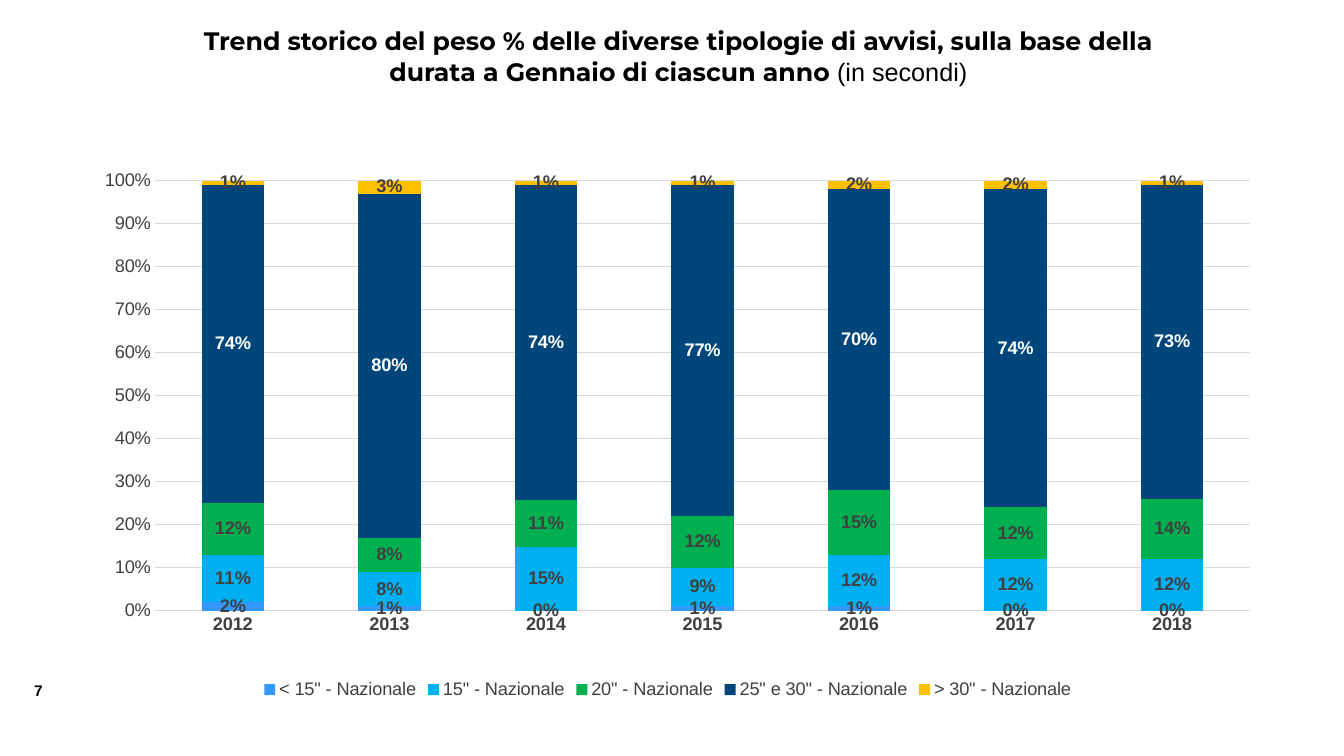
from lxml import etree
from pptx import Presentation
from pptx.chart.data import CategoryChartData
from pptx.dml.color import RGBColor
from pptx.enum.chart import XL_CHART_TYPE as ChartType, XL_LABEL_POSITION as LabelPosition
from pptx.enum.chart import XL_LEGEND_POSITION as LegendPosition, XL_TICK_MARK as TickMark
from pptx.enum.shapes import MSO_SHAPE as Shape
from pptx.enum.text import MSO_ANCHOR as Anchor, PP_ALIGN as Align
from pptx.oxml.ns import qn
from pptx.util import Cm, Pt

COLORS = {
    "black": "000000", "white": "FFFFFF", "text": "404040", "grid": "D9D9D9",
    "azure": "3399FF", "sky": "00B0F0", "green": "00B050", "navy": "00467A", "amber": "FFC000",
}
YEARS = ["2012", "2013", "2014", "2015", "2016", "2017", "2018"]
DURATIONS = [
    ('< 15" - Nazionale', "azure", "text", [0.02, 0.01, 0, 0.01, 0.01, 0, 0]),
    ('15" - Nazionale', "sky", "text", [0.11, 0.08, 0.15, 0.09, 0.12, 0.12, 0.12]),
    ('20" - Nazionale', "green", "text", [0.12, 0.08, 0.11, 0.12, 0.15, 0.12, 0.14]),
    ('25" e 30" - Nazionale', "navy", "white", [0.74, 0.80, 0.74, 0.77, 0.70, 0.74, 0.73]),
    ('> 30" - Nazionale', "amber", "text", [0.01, 0.03, 0.01, 0.01, 0.02, 0.02, 0.01]),
]


def rgb(name):
    return RGBColor.from_string(COLORS[name])


def style_font(font, color, **formats):
    for attribute, value in formats.items():
        setattr(font, attribute, value)
    font.color.rgb = rgb(color)


presentation = Presentation()
presentation.slide_width, presentation.slide_height = Cm(33.87), Cm(19.05)
slide = presentation.slides.add_slide(presentation.slide_layouts[6])

number_box = slide.shapes.add_textbox(Cm(0.61), Cm(17.04), Cm(1.07), Cm(0.74))
number_box.text_frame.word_wrap = True
number_run = number_box.text_frame.paragraphs[0].add_run()
number_run.text = "7"
style_font(number_run.font, "black", name="Arial", size=Pt(11), bold=True)

title = slide.shapes.add_shape(Shape.RECTANGLE, Cm(3.94), Cm(0.51), Cm(26.31), Cm(1.8))
title.shadow.inherit = False
title.fill.solid()
title.fill.fore_color.rgb = rgb("white")
title.line.fill.background()
title.text_frame.word_wrap = True
title.text_frame.vertical_anchor = Anchor.MIDDLE
title_paragraph = title.text_frame.paragraphs[0]
title_paragraph.alignment = Align.CENTER
for text, font_name, bold in [
    ("Trend storico del peso % delle diverse tipologie di avvisi, sulla base della "
     "durata a Gennaio di ciascun anno ", "Montserrat", True),
    ("(in secondi)", "Arial", False),
]:
    run = title_paragraph.add_run()
    run.text = text
    style_font(run.font, "black", name=font_name, size=Pt(18), bold=bold)

chart_data = CategoryChartData(number_format="0%")
chart_data.categories = YEARS
for name, _, _, shares in DURATIONS:
    chart_data.add_series(name, shares)
chart = slide.shapes.add_chart(
    ChartType.COLUMN_STACKED_100, Cm(1.93), Cm(3.73), Cm(29.79), Cm(14), chart_data
).chart
chart.has_title = False
style_font(chart.font, "text", name="Arial", size=Pt(13))

plot = chart.plots[0]
plot.vary_by_categories = False
plot.gap_width = 150
plot.overlap = 100
for series, (_, fill_color, label_color, _) in zip(plot.series, DURATIONS):
    series.format.fill.solid()
    series.format.fill.fore_color.rgb = rgb(fill_color)
    labels = series.data_labels
    label_formats = {
        "show_value": True, "position": LabelPosition.CENTER,
        "number_format": "0%", "number_format_is_linked": False,
    }
    for attribute, value in label_formats.items():
        setattr(labels, attribute, value)
    style_font(labels.font, label_color, name="Arial", size=Pt(13), bold=True)

for axis, bold in [(chart.category_axis, True), (chart.value_axis, False)]:
    axis.major_tick_mark = axis.minor_tick_mark = TickMark.NONE
    style_font(axis.tick_labels.font, "text", name="Arial", size=Pt(13), bold=bold)

value_axis = chart.value_axis
value_axis.minimum_scale, value_axis.maximum_scale, value_axis.major_unit = 0, 1, 0.1
value_axis.tick_labels.number_format = "0%"
value_axis.tick_labels.number_format_is_linked = False
value_axis.format.line.fill.background()
for line in (chart.category_axis.format.line, value_axis.major_gridlines.format.line):
    line.color.rgb = rgb("grid")
    line.width = Pt(0.75)

chart.has_legend = True
chart.legend.position = LegendPosition.BOTTOM
chart.legend.include_in_layout = False
style_font(chart.legend.font, "text", name="Arial", size=Pt(13), bold=False)

plot_area = chart.element.find(".//" + qn("c:plotArea"))
for layout in plot_area.findall(qn("c:layout")):
    plot_area.remove(layout)
layout = etree.Element(qn("c:layout"))
plot_area.insert(0, layout)
manual_layout = etree.SubElement(layout, qn("c:manualLayout"))
for tag, value in [
    ("layoutTarget", "inner"), ("xMode", "edge"), ("yMode", "edge"),
    ("x", "0.066"), ("y", "0.059"), ("w", "0.927"), ("h", "0.774"),
]:
    etree.SubElement(manual_layout, qn("c:" + tag)).set("val", value)

presentation.save("out.pptx")
